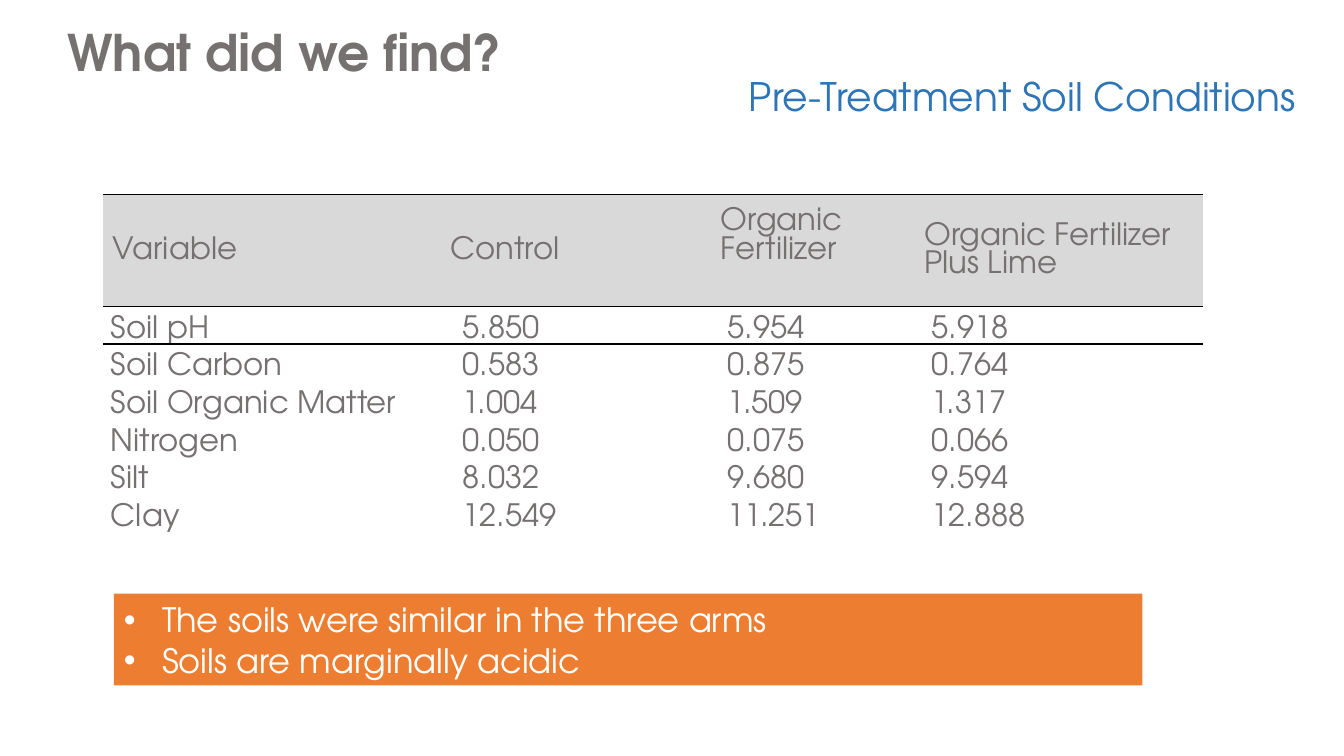
from lxml import etree
from pptx import Presentation
from pptx.dml.color import RGBColor
from pptx.enum.shapes import MSO_SHAPE as Shape
from pptx.enum.text import MSO_ANCHOR as Anchor, PP_ALIGN as Align
from pptx.oxml.ns import qn
from pptx.util import Inches, Pt

# Content
TITLE = "What did we find?"
SUBTITLE = "Pre-Treatment Soil Conditions"
HEADINGS = ["Variable", "Control", "Organic Fertilizer", "Organic Fertilizer Plus Lime"]
SOILS = [
    ("Soil pH", "5.850", "5.954", "5.918"),
    ("Soil Carbon", "0.583", "0.875", "0.764"),
    ("Soil Organic Matter", "1.004", "1.509", "1.317"),
    ("Nitrogen", "0.050", "0.075", "0.066"),
    ("Silt", "8.032", "9.680", "9.594"),
    ("Clay", "12.549", "11.251", "12.888"),
]
FINDINGS = ["The soils were similar in the three arms", "Soils are marginally acidic"]

# Format
FONT = "TeX Gyre Adventor"
GREY, BLUE, WHITE = "767171", "2E75B6", "FFFFFF"
ORANGE, BAND, BLACK = "ED7D31", "D9D9D9", "000000"
NO_STYLE = "{2D5ABB26-0587-4C30-8999-92F81FD0307C}"
COLUMN_WIDTHS = [3.44, 0.05, 2.63, 2.02, 2.77]
HEADING_COLUMNS, VALUE_COLUMNS = [0, 1, 3, 4], [0, 2, 3, 4]
TABLE_HEIGHT, HEADING_HEIGHT = 3.35, 1.11
ROW_HEIGHT = (TABLE_HEIGHT - HEADING_HEIGHT) / len(SOILS)


def color(hex_code):
    return RGBColor.from_string(hex_code)


def write(frame, lines, size=22, ink=GREY, bold=False, align=Align.LEFT, bullet=False):
    frame.word_wrap = True
    for i, line in enumerate(lines):
        para = frame.paragraphs[0] if i == 0 else frame.add_paragraph()
        para.alignment = align
        if bullet:
            props = para._p.get_or_add_pPr()
            props.set("marL", str(Inches(0.38)))
            props.set("indent", str(-Inches(0.38)))
            etree.SubElement(props, qn("a:buFont")).set("typeface", "Arial")
            etree.SubElement(props, qn("a:buChar")).set("char", "•")
        run = para.add_run()
        run.text = line
        run.font.name, run.font.size, run.font.bold = FONT, Pt(size), bold
        run.font.color.rgb = color(ink)


def set_margins(cell, left, top, right, bottom):
    cell.margin_left, cell.margin_top = Inches(left), Inches(top)
    cell.margin_right, cell.margin_bottom = Inches(right), Inches(bottom)


def add_border(cell, side, width=1):
    line = etree.SubElement(cell._tc.get_or_add_tcPr(), qn("a:" + side), w=str(Pt(width)))
    fill = etree.SubElement(line, qn("a:solidFill"))
    etree.SubElement(fill, qn("a:srgbClr")).set("val", BLACK)


deck = Presentation()
deck.slide_width, deck.slide_height = Inches(13.33), Inches(7.5)
slide = deck.slides.add_slide(deck.slide_layouts[6])

# Title and subtitle
for text, top, height, look in [
    (TITLE, 0.16, 0.71, dict(size=36, bold=True)),
    (SUBTITLE, 0.67, 0.57, dict(size=28, ink=BLUE, align=Align.RIGHT)),
]:
    heading = slide.shapes.add_textbox(Inches(0.57), Inches(top), Inches(12.38), Inches(height))
    write(heading.text_frame, [text], **look)

# Soil table
frame = slide.shapes.add_table(
    len(SOILS) + 1, len(COLUMN_WIDTHS), Inches(1.02), Inches(1.93),
    Inches(sum(COLUMN_WIDTHS)), Inches(TABLE_HEIGHT))
soil_table = frame.table
soil_table.first_row = soil_table.horz_banding = False
soil_table._tbl.tblPr.find(qn("a:tableStyleId")).text = NO_STYLE
for column, width in zip(soil_table.columns, COLUMN_WIDTHS):
    column.width = Inches(width)
for r, row in enumerate(soil_table.rows):
    row.height = Inches(ROW_HEIGHT if r else HEADING_HEIGHT)
    for cell in row.cells:
        set_margins(cell, 0, 0, 0, 0)
        if r < 2:
            add_border(cell, "lnT")
            add_border(cell, "lnB", 1.5 if r else 1)
        if r:
            cell.fill.background()
        else:
            cell.fill.solid()
            cell.fill.fore_color.rgb = color(BAND)

# Heading cells: "Variable" is indented, "Organic Fertilizer" sits higher
soil_table.cell(0, 1).merge(soil_table.cell(0, 2))
for c, text in zip(HEADING_COLUMNS, HEADINGS):
    cell = soil_table.cell(0, c)
    cell.vertical_anchor = Anchor.MIDDLE
    set_margins(cell, 0.01 if c else 0.1, 0.01, 0.01, 0.29 if c == 3 else 0)
    write(cell.text_frame, [text])

# Value cells
for r, soil in enumerate(SOILS, 1):
    for c, text in zip(VALUE_COLUMNS, soil):
        cell = soil_table.cell(r, c)
        cell.vertical_anchor = Anchor.BOTTOM
        set_margins(cell, 0.08, 0, 0.07, 0)
        write(cell.text_frame, [text])

# Findings
findings = slide.shapes.add_shape(
    Shape.RECTANGLE, Inches(1.13), Inches(5.89), Inches(10.2), Inches(0.91))
findings.shadow.inherit = False
findings.fill.solid()
findings.fill.fore_color.rgb = color(ORANGE)
findings.line.fill.background()
write(findings.text_frame, FINDINGS, size=24, ink=WHITE, bullet=True)

deck.save("out.pptx")
